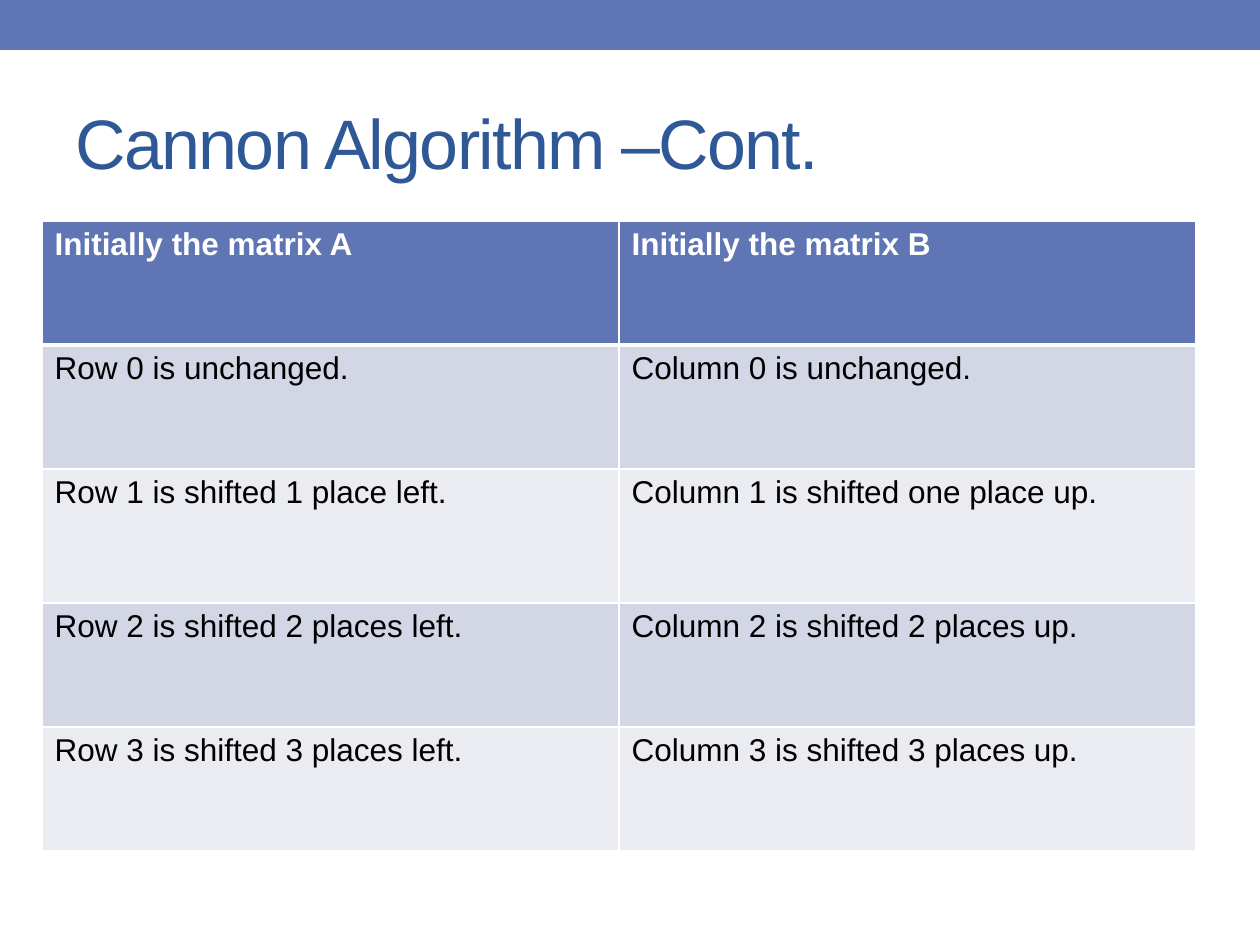
from lxml import etree
from pptx import Presentation
from pptx.dml.color import RGBColor
from pptx.enum.shapes import MSO_SHAPE
from pptx.enum.text import MSO_ANCHOR, PP_ALIGN
from pptx.oxml.ns import qn
from pptx.util import Emu, Pt

RECTANGLE = MSO_SHAPE.RECTANGLE
MIDDLE = MSO_ANCHOR.MIDDLE
LEFT = PP_ALIGN.LEFT
TITLE_ONLY = 5

BLUE = RGBColor(0x60, 0x76, 0xB4)
TITLE_BLUE = RGBColor(0x2F, 0x58, 0x97)
BAND_DARK = RGBColor(0xD2, 0xD6, 0xE5)
BAND_LIGHT = RGBColor(0xEA, 0xEC, 0xF2)
WHITE = RGBColor(0xFF, 0xFF, 0xFF)
BLACK = RGBColor(0x00, 0x00, 0x00)

TITLE = "Cannon Algorithm –Cont."
ROWS = [
    ("Initially the matrix A", "Initially the matrix B"),
    ("Row 0 is unchanged.", "Column 0 is unchanged."),
    ("Row 1 is shifted 1 place left.", "Column 1 is shifted one place up."),
    ("Row 2 is shifted 2 places left.", "Column 2 is shifted 2 places up."),
    ("Row 3 is shifted 3 places left.", "Column 3 is shifted 3 places up."),
]
ROW_HEIGHTS = [124, 124, 134, 124, 124]
COLUMN_WIDTH = 577


def px(n):
    return Emu(n * 914400 // 126)


def box(*lengths):
    return [px(n) for n in lengths]


def write(tf, text, size=18, color=BLACK, bold=False, spacing=None):
    p = tf.paragraphs[0]
    p.alignment = LEFT
    r = p.add_run()
    r.text = text
    r.font.name = "Arial"
    r.font.size = Pt(size)
    r.font.bold = bold
    r.font.color.rgb = color
    if spacing is not None:
        r.font._element.set("spc", str(spacing * 100))


def set_borders(cell, bottom=1, top=1):
    """Draw white cell borders; widths are in points."""
    tc_pr = cell._tc.get_or_add_tcPr()
    widths = {"a:lnL": 1, "a:lnR": 1, "a:lnT": top, "a:lnB": bottom}
    for i, (tag, width) in enumerate(widths.items()):
        ln = etree.Element(qn(tag), w=str(Pt(width)))
        fill = etree.SubElement(ln, qn("a:solidFill"))
        etree.SubElement(fill, qn("a:srgbClr"), val=str(WHITE))
        tc_pr.insert(i, ln)


def add_matrix_table(slide):
    n_cols = len(ROWS[0])
    frame = slide.shapes.add_table(
        len(ROWS), n_cols,
        *box(42, 221, COLUMN_WIDTH * n_cols, sum(ROW_HEIGHTS)))
    table = frame.table
    for column in table.columns:
        column.width = px(COLUMN_WIDTH)
    for i, (texts, height) in enumerate(zip(ROWS, ROW_HEIGHTS)):
        header = i == 0
        table.rows[i].height = px(height)
        band = BLUE if header else BAND_DARK if i % 2 else BAND_LIGHT
        for j, text in enumerate(texts):
            cell = table.cell(i, j)
            cell.fill.solid()
            cell.fill.fore_color.rgb = band
            set_borders(cell, bottom=3 if header else 1, top=3 if i == 1 else 1)
            write(cell.text_frame, text, bold=header,
                  color=WHITE if header else BLACK)


def main():
    prs = Presentation()
    prs.slide_width, prs.slide_height = box(1260, 945)
    slide = prs.slides.add_slide(prs.slide_layouts[TITLE_ONLY])

    title = slide.shapes.title
    title.left, title.top, title.width, title.height = box(63, 73, 1134, 136)
    title.text_frame.vertical_anchor = MIDDLE
    write(title.text_frame, TITLE, size=40, color=TITLE_BLUE, spacing=-1)

    bar = slide.shapes.add_shape(RECTANGLE, *box(0, 0, 1260, 50))
    bar.shadow.inherit = False
    bar.fill.solid()
    bar.fill.fore_color.rgb = BLUE
    bar.line.fill.background()

    add_matrix_table(slide)
    prs.save("out.pptx")


if __name__ == "__main__":
    main()
